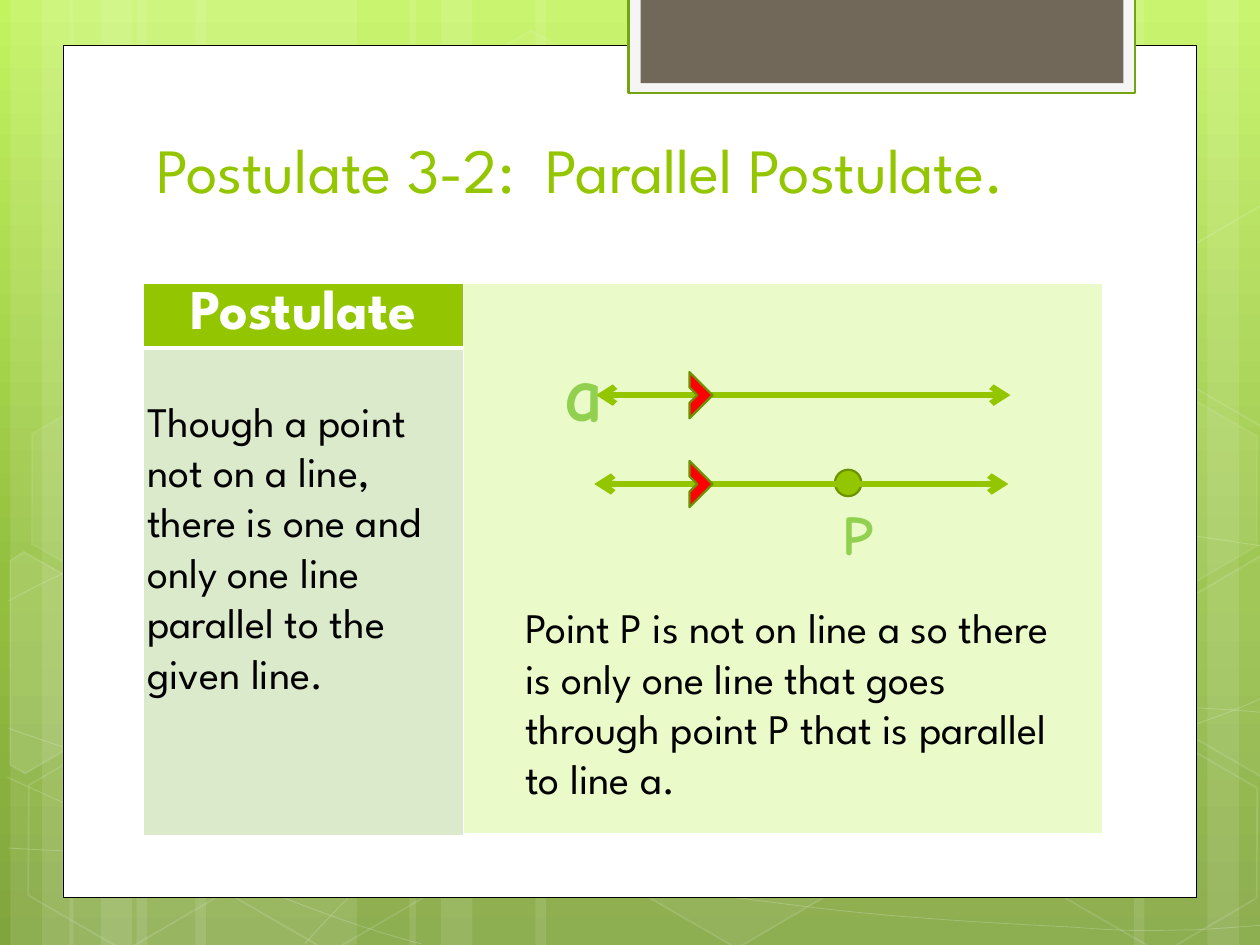
from copy import deepcopy

from lxml.etree import SubElement
from pptx import Presentation
from pptx.dml.color import RGBColor
from pptx.enum.shapes import MSO_CONNECTOR, MSO_SHAPE as SHAPE
from pptx.enum.text import MSO_ANCHOR as ANCHOR, MSO_AUTO_SIZE as FIT, PP_ALIGN as ALIGN
from pptx.oxml.ns import qn
from pptx.util import Pt

COLORS = {
    "white": "FFFFFF", "black": "000000", "lime": "94C600", "olive": "6D9200",
    "frame": "74A510", "taupe": "71685A", "smoke": "F5F5F5", "pale": "EAFAC9",
    "sage": "DCEACC", "label": "92D050", "red": "FF0000",
    "sky": "C3F35F", "leaf": "93BF3F", "moss": "81A53E",
}
SANS, COMIC = "League Spartan", "Comic Neue"
TITLE = "Postulate 3-2:  Parallel Postulate."
HEADER = "Postulate"
TEXTS = [
    ("Though a point not on a line, there is one and only one line parallel to the given line.",
     (77, 222.2, 192, 181.5), SANS, 24, "black", False),
    ("a", (315.4, 193.6, 57, 60.5), COMIC, 44, "label", True),
    ("P", (474.5, 282, 57, 46), COMIC, 32, "label", True),
    ("Point P is not on line a so there is only one line that goes through point P that is parallel to line a.",
     (293, 340.3, 331, 124), SANS, 24, "black", False),
]
LINES = [(340.6, 577.4, 225.8), (339.6, 576.2, 276.6)]
MARK_X, MARK_SIZE = 384.6, 18.7
POINT = (477.1, 268.4, 15.1, 15.1)
STOPS = [(0, "sky"), (0.62, "leaf"), (1, "moss")]
BANDS = [(78, 126), (6, 36), (24, 60), (111.6, 126), (39.6, 36), (57.6, 60),
         (528, 126), (690, 36), (648, 60), (306, 222), (234, 36), (252, 60)]
HEXAGONS = [
    (240.5, 26, 4, 8), (357.8, 424, 6, 12), (8, 425.5, 0, 12), (10, 224.6, 7, 8),
    (125.3, 426.2, 0, 12), (542.2, 326.2, 10, 12), (600.5, 427, 0, 12), (600.5, 226, 7, 8),
]
CUT_HEXAGONS = [
    (10, [(5.8, 320.4), (13.7, 315.4), (69.1, 347), (68.4, 410.4), (14.4, 442), (5.8, 437)]),
    (4, [(666.7, 349.2), (720.7, 317.5), (726.5, 321.1), (726.5, 441.4), (721.4, 444.2), (666.7, 412.6)]),
    (0, [(666.7, 149), (720.7, 117.4), (727.2, 121), (726.5, 241.2), (721.4, 244), (666.7, 212.4)]),
]
STRAIGHT_TO = (686.2, 404.6)
CURVES = [
    [(5, 484.6), (43.9, 486.7), (82.8, 488.9), (136.8, 488.2), (190.8, 487.4), (257.8, 486),
     (329.8, 478.8), (401.8, 471.6), (504, 457.9), (570.2, 444.2), (635.8, 430.6), (703.4, 409),
     (725, 396.7)],
    [(5, 343.4), (25.9, 331.9), (46.8, 321.1), (87.1, 310.3), (128.2, 299.5), (186.5, 283.7),
     (249.8, 278.6), (313.9, 273.6), (391.7, 272.9), (470.9, 278.6), (550, 284.4), (681.8, 306.7),
     (725, 312.5)],
    [(4.3, 444.2), (91.4, 483.8), (177.8, 523.4), (240.5, 539.3)],
    [(5, 416.2), (27.4, 424.1), (50.4, 432), (92.2, 443.5), (133.9, 454.3), (196.6, 472.3),
     (257, 484.6), (316.8, 496.8), (392.4, 509.8), (452.2, 517), (511.9, 524.9), (576, 527.8),
     (614.2, 529.9), (651.6, 532.8), (661.7, 531.4), (680.4, 531.4), (699.1, 530.6),
     (712.1, 529.2), (725, 528.5)],
    [(174.2, 539.3), (187.2, 524.9), (200.2, 510.5), (217.4, 497.5), (234.7, 484.6), (259.2, 470.2),
     (279.4, 460.1), (299.5, 450), (311.8, 445.7), (338.4, 438.5), (364.3, 431.3), (412.6, 421.2),
     (437.8, 416.2), (463.7, 411.1), (467.3, 411.1), (489.6, 409.7), (511.9, 407.5),
     (547.2, 405.4), (571.7, 404.6), (596.9, 403.9), (637.9, 404.6), (637.9, 404.6),
     STRAIGHT_TO, (699.1, 405.4), (711.4, 406.1), (717.8, 406.8), (724.3, 407.5),
     (722.2, 406.8), (724.3, 407.5)],
]


def rgb(name):
    return RGBColor.from_string(COLORS[name])


def set_alpha(sp, where, percent):
    for clr in sp._element.spPr.findall(f"{where}{qn('a:solidFill')}/{qn('a:srgbClr')}"):
        SubElement(clr, qn("a:alpha")).set("val", str(percent * 1000))


def style(sp, fill=None, line=None, width=1, fill_alpha=100, line_alpha=100):
    sp.shadow.inherit = False
    if fill:
        sp.fill.solid()
        sp.fill.fore_color.rgb = rgb(fill)
        if fill_alpha < 100:
            set_alpha(sp, "", fill_alpha)
    else:
        sp.fill.background()
    if line:
        sp.line.color.rgb = rgb(line)
        sp.line.width = Pt(width)
        if line_alpha < 100:
            set_alpha(sp, qn("a:ln") + "/", line_alpha)
    else:
        sp.line.fill.background()
    return sp


def add_shape(s, kind, box, *args, **kwargs):
    return style(s.shapes.add_shape(kind, *map(Pt, box)), *args, **kwargs)


def add_path(s, points, close, *args, **kwargs):
    pts = [(Pt(x), Pt(y)) for x, y in points]
    fb = s.shapes.build_freeform(*pts[0])
    fb.add_line_segments(pts[1:], close=close)
    return style(fb.convert_to_shape(), *args, **kwargs)


def add_curve(s, nodes):
    sp = add_path(s, nodes, False, None, "white", 0.5, line_alpha=20)
    steps = list(sp._element.iter(qn("a:lnTo")))
    outline = steps[0].getparent()
    group = []
    for node, step in zip(nodes[1:], steps):
        if node == STRAIGHT_TO:
            continue
        group.append(step)
        if len(group) == 3:
            curve = outline.makeelement(qn("a:cubicBezTo"), {})
            group[0].addprevious(curve)
            for part in group:
                curve.append(part[0])
                outline.remove(part)
            group = []


def write(tf, text, font, size, color, bold=False):
    p = tf.paragraphs[0]
    r = p.add_run()
    r.text = text
    r.font.name, r.font.size, r.font.bold = font, Pt(size), bold
    r.font.color.rgb = rgb(color)
    return p


def add_background(s):
    fill = s.background.fill
    fill.gradient()
    fill.gradient_angle = 270
    first = fill.gradient_stops[0]._gs
    first.addnext(deepcopy(first))
    for stop, (position, color) in zip(fill.gradient_stops, STOPS):
        stop.position, stop.color.rgb = position, rgb(color)
    for x, w in BANDS:
        add_shape(s, SHAPE.RECTANGLE, (x, 0, w, 540), "white", fill_alpha=10)
    for nodes in CURVES:
        add_curve(s, nodes)
    for x, y, fill_alpha, line_alpha in HEXAGONS:
        sp = add_shape(s, SHAPE.HEXAGON, (x, y, 126, 109.4), "white" if fill_alpha else None, "white",
                       fill_alpha=fill_alpha, line_alpha=line_alpha)
        sp.adjustments[0], sp.rotation = 0.285, 30
    for fill_alpha, points in CUT_HEXAGONS:
        add_path(s, points, True, "white" if fill_alpha else None, "white",
                 fill_alpha=fill_alpha, line_alpha=12)
    add_shape(s, SHAPE.RECTANGLE, (36, 26, 648, 487), "white", "black", 0.5)
    add_shape(s, SHAPE.RECTANGLE, (359.2, -1.5, 289.6, 54.8), "smoke", "frame", 1.25)
    add_shape(s, SHAPE.RECTANGLE, (366, -1.5, 276, 49), "taupe")


def add_title(s):
    title = s.shapes.title
    s.shapes._spTree.append(title._element)
    title.left, title.top, title.width, title.height = map(Pt, (82, 66.2, 586, 55.4))
    title.text_frame.vertical_anchor = ANCHOR.BOTTOM
    write(title.text_frame, TITLE, SANS, 36, "lime").alignment = ALIGN.LEFT


def style_cell(cell, fill, bottom):
    tc_pr = cell._tc.get_or_add_tcPr()
    for side, width in (("L", 1), ("R", 1), ("T", 1), ("B", bottom)):
        ln = SubElement(tc_pr, qn(f"a:ln{side}"), w=str(Pt(width)))
        SubElement(SubElement(ln, qn("a:solidFill")), qn("a:srgbClr"), val=COLORS["white"])
    cell.fill.solid()
    cell.fill.fore_color.rgb = rgb(fill)


def add_postulate_table(s):
    table = s.shapes.add_table(2, 2, *map(Pt, (82, 162, 548, 315.4))).table
    table.horz_banding = False
    for col, width in zip(table.columns, (182.9, 365.1)):
        col.width = Pt(width)
    for row, height in zip(table.rows, (36.8, 278.6)):
        row.height = Pt(height)
    for i, (left, bottom) in enumerate((("lime", 3), ("sage", 1))):
        style_cell(table.cell(i, 0), left, bottom)
        style_cell(table.cell(i, 1), "pale", 3)
    table.cell(0, 1).merge(table.cell(1, 1))
    cell = table.cell(0, 0)
    cell.vertical_anchor = ANCHOR.MIDDLE
    write(cell.text_frame, HEADER, SANS, 32, "white", True).alignment = ALIGN.CENTER


def add_diagram(s):
    add_shape(s, SHAPE.OVAL, POINT, "lime", "olive", 1.25)
    for x1, x2, y in LINES:
        cx = s.shapes.add_connector(MSO_CONNECTOR.STRAIGHT, *map(Pt, (x1, y, x2, y)))
        cx.line.color.rgb, cx.line.width = rgb("lime"), Pt(3.5)
        for end in ("headEnd", "tailEnd"):
            SubElement(cx.line._get_or_add_ln(), qn(f"a:{end}"), type="arrow")
        SubElement(cx._element.spPr, qn("a:effectLst"))
        mark = add_shape(s, SHAPE.HALF_FRAME, (MARK_X, y - MARK_SIZE / 2, MARK_SIZE, MARK_SIZE),
                         "red", "olive", 1.25)
        mark.rotation = 135
    for text, box, *font in TEXTS:
        tf = s.shapes.add_textbox(*map(Pt, box)).text_frame
        tf.word_wrap, tf.auto_size = True, FIT.SHAPE_TO_FIT_TEXT
        write(tf, text, *font)


def main():
    """Build the Parallel Postulate slide."""
    prs = Presentation()
    prs.slide_width, prs.slide_height = Pt(720), Pt(540)
    s = prs.slides.add_slide(prs.slide_layouts[5])
    add_background(s)
    add_title(s)
    add_postulate_table(s)
    add_diagram(s)
    prs.save("out.pptx")


if __name__ == "__main__":
    main()
